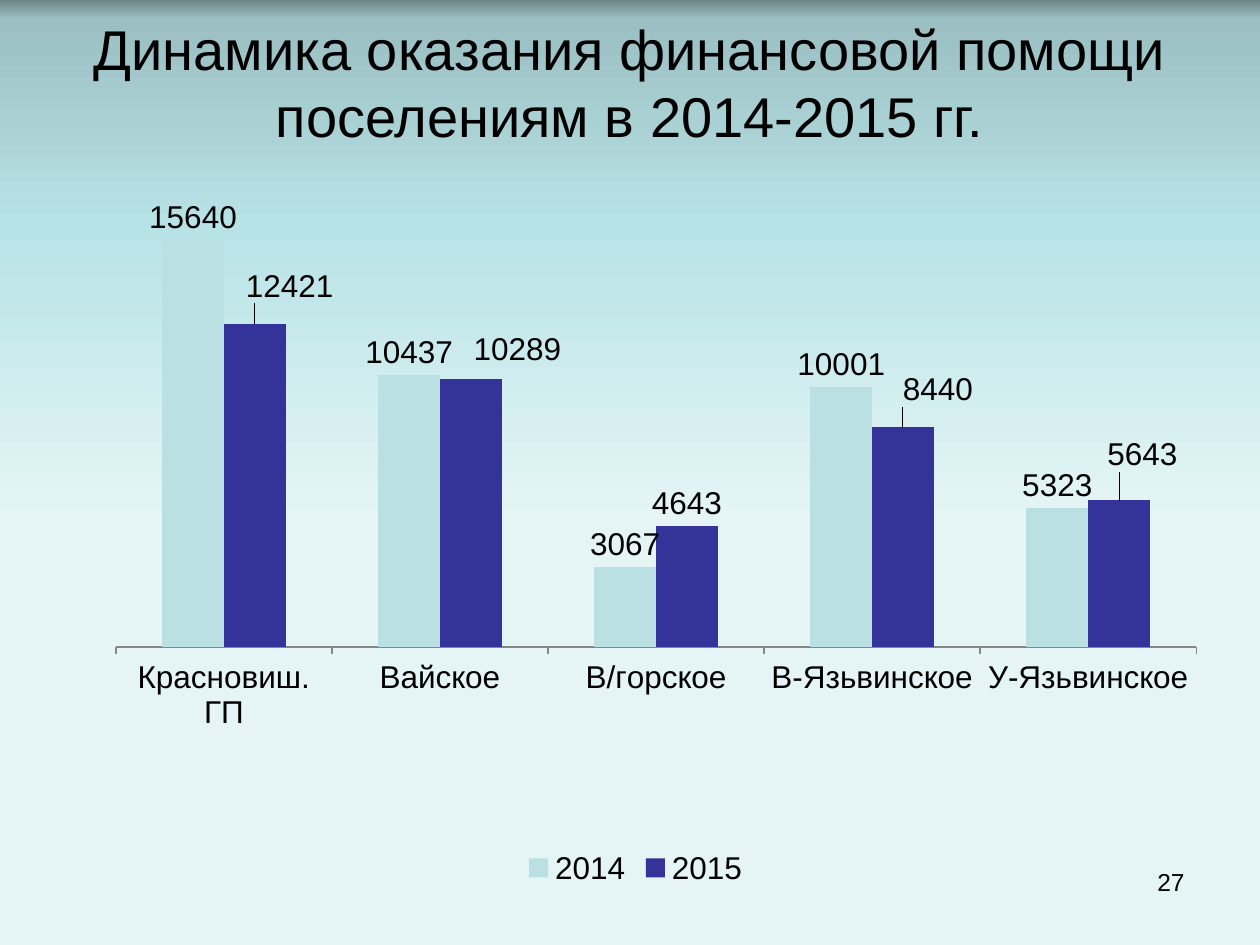
import pptx
import pptx.util
import pptx.chart.data
import pptx.dml.color
import pptx.enum.chart
import pptx.enum.text
import pptx.oxml
import pptx.oxml.ns

Pt = pptx.util.Pt
ALIGN = pptx.enum.text.PP_ALIGN
ANCHOR = pptx.enum.text.MSO_ANCHOR
CHART = pptx.enum.chart

BACKGROUND_STOPS = [(0, "6D8688"), (2, "9BBFC2"), (24, "B8E3E6"), (55, "E5F5F6"), (100, "E5F5F6")]
TEXTS = [
    ("Динамика оказания финансовой помощи поселениям в 2014-2015 гг.",
     (36, 21.6, 648, 50.4), 32, ALIGN.CENTER, ANCHOR.MIDDLE),
    ("27", (516.24, 491.76, 167.76, 37.44), 14, ALIGN.RIGHT, ANCHOR.TOP),
]
CHART_BOX = (30.24, 77.76, 666, 432)
PLOT = {"x": 0.054, "y": 0.056, "w": 0.927, "h": 0.62}
CATEGORIES = ["Красновиш. ГП", "Вайское", "В/горское", "В-Язьвинское", "У-Язьвинское"]
SERIES = [
    ("2014", "BBE0E3", [15640, 10437, 3067, 10001, 5323], {}),
    ("2015", "333399", [12421, 10289, 4643, 8440, 5643],
     {0: (0.03, -0.02), 1: (0.04, -0.01), 3: (0.03, -0.02), 4: (0.02, -0.03)}),
]


def color(value):
    return pptx.dml.color.RGBColor.from_string(value)


def assign(target, **values):
    for name, value in values.items():
        setattr(target, name, value)


def set_font(font, size):
    assign(font, size=Pt(size), name="Arial", bold=False)
    font.fill.solid()
    font.fill.fore_color.rgb = color("000000")


def layout_xml(values, inner=False):
    target = '<c:layoutTarget val="inner"/>' if inner else ""
    modes = '<c:xMode val="edge"/><c:yMode val="edge"/>' if inner else ""
    numbers = "".join(f'<c:{key} val="{value}"/>' for key, value in values.items())
    return pptx.oxml.parse_xml(
        f'<c:layout {pptx.oxml.ns.nsdecls("c")}><c:manualLayout>'
        f"{target}{modes}{numbers}</c:manualLayout></c:layout>")


def paint_background(slide):
    fill = slide.background.fill
    fill.gradient()
    gradient = slide.background._cSld.xpath(".//a:gradFill")[0]
    stops = "".join(f'<a:gs pos="{position * 1000}"><a:srgbClr val="{value}"/></a:gs>'
                    for position, value in BACKGROUND_STOPS)
    gradient.replace(gradient.xpath("a:gsLst")[0], pptx.oxml.parse_xml(
        f'<a:gsLst {pptx.oxml.ns.nsdecls("a")}>{stops}</a:gsLst>'))
    gradient.xpath("a:lin")[0].set("ang", "5400000")


def add_text(slide, text, box, size, alignment, anchor):
    frame = slide.shapes.add_textbox(*map(Pt, box)).text_frame
    assign(frame, word_wrap=True, vertical_anchor=anchor)
    paragraph = frame.paragraphs[0]
    paragraph.alignment = alignment
    run = paragraph.add_run()
    run.text = text
    set_font(run.font, size)


def style_series(series, value, offsets):
    series.format.fill.solid()
    series.format.fill.fore_color.rgb = color(value)
    outside = CHART.XL_LABEL_POSITION.OUTSIDE_END
    labels = series.data_labels
    assign(labels, show_value=True, position=outside)
    set_font(labels.font, 18)
    for index, (x, y) in offsets.items():
        label = series.points[index].data_label
        set_font(label.font, 18)
        label.position = outside
        element = series._element.xpath(f'.//c:dLbl[c:idx/@val="{index}"]')[0]
        element.insert(1, layout_xml({"x": x, "y": y}))


def add_chart(slide):
    data = pptx.chart.data.CategoryChartData()
    data.categories = CATEGORIES
    for name, _, values, _ in SERIES:
        data.add_series(name, values)
    chart = slide.shapes.add_chart(
        CHART.XL_CHART_TYPE.COLUMN_CLUSTERED, *map(Pt, CHART_BOX), data).chart
    assign(chart, has_title=False, has_legend=True)
    set_font(chart.font, 18)
    assign(chart.legend, position=CHART.XL_LEGEND_POSITION.BOTTOM, include_in_layout=False)
    assign(chart.value_axis, visible=False, has_major_gridlines=False,
           minimum_scale=0, maximum_scale=18000)
    assign(chart.category_axis, major_tick_mark=CHART.XL_TICK_MARK.OUTSIDE)
    line = chart.category_axis.format.line
    line.width = Pt(0.75)
    line.color.rgb = color("868686")
    plot = chart.plots[0]
    assign(plot, gap_width=150, overlap=0, vary_by_categories=False)
    for series, (_, value, _, offsets) in zip(plot.series, SERIES):
        style_series(series, value, offsets)
    area = chart._chartSpace.xpath("c:chart/c:plotArea")[0]
    for layout in area.xpath("c:layout"):
        area.remove(layout)
    area.insert(0, layout_xml(PLOT, inner=True))


def main():
    presentation = pptx.Presentation()
    assign(presentation, slide_width=Pt(720), slide_height=Pt(540))
    slide = presentation.slides.add_slide(presentation.slide_layouts[6])
    paint_background(slide)
    add_chart(slide)
    for item in TEXTS:
        add_text(slide, *item)
    presentation.save("out.pptx")


if __name__ == "__main__":
    main()
